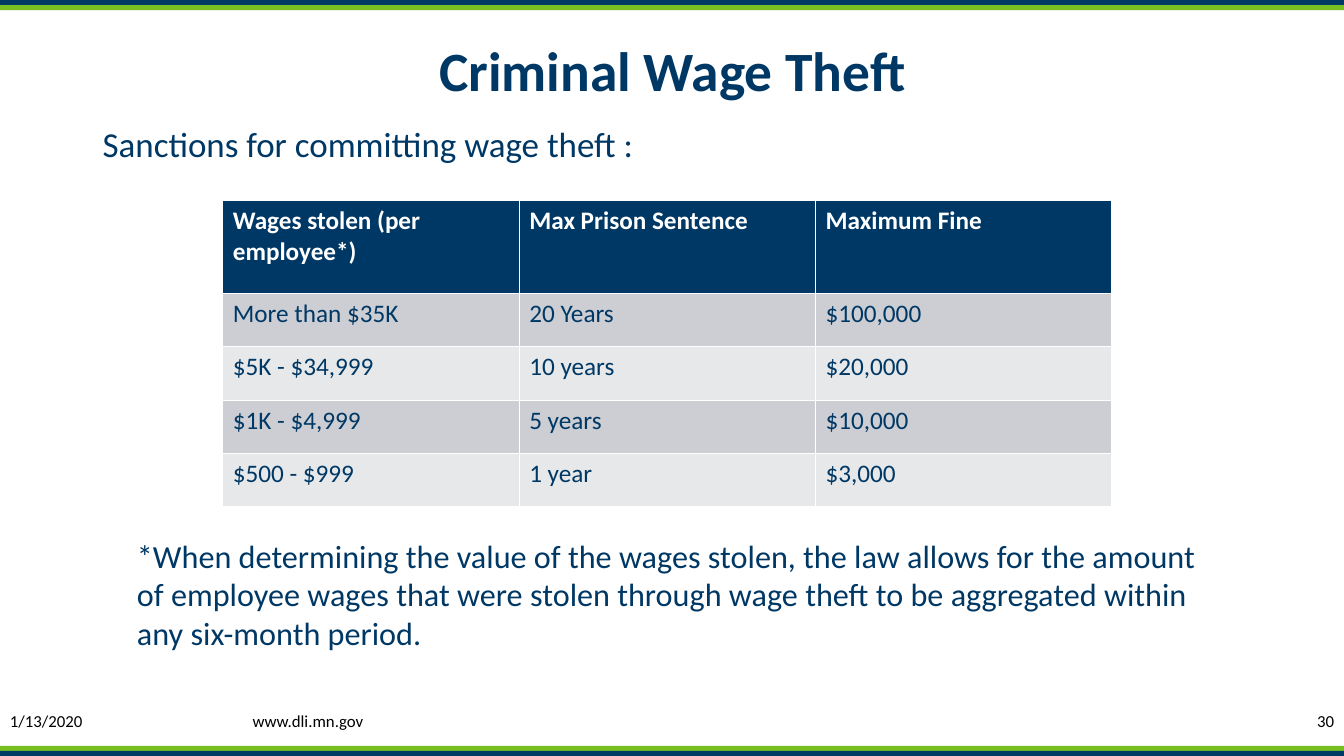
"""Build the slide on sanctions for criminal wage theft."""
from pptx import Presentation
from pptx.dml.color import RGBColor
from pptx.enum.shapes import MSO_SHAPE
from pptx.enum.text import MSO_ANCHOR, PP_ALIGN
from pptx.util import Inches, Pt

NAVY = RGBColor(0x00, 0x38, 0x65)
GREEN = RGBColor(0x78, 0xBE, 0x21)
BLACK = RGBColor(0, 0, 0)
WHITE = RGBColor(0xFF, 0xFF, 0xFF)
DARK_BAND = RGBColor(0xCC, 0xCE, 0xD3)
LIGHT_BAND = RGBColor(0xE7, 0xE8, 0xEA)
WIDTH, HEIGHT, STRIPE = 13.33, 7.5, 0.05

prs = Presentation()
prs.slide_width, prs.slide_height = Inches(WIDTH), Inches(HEIGHT)
slide = prs.slides.add_slide(prs.slide_layouts[6])


def style(paragraph, size, color, bold=False):
    font = paragraph.font
    font.name, font.size, font.bold = "Calibri", Pt(size), bold
    font.color.rgb = color


def add_text(text, box, size, color=NAVY, align=PP_ALIGN.LEFT, anchor=MSO_ANCHOR.TOP, bold=False):
    frame = slide.shapes.add_textbox(*map(Inches, box)).text_frame
    frame.word_wrap = True
    frame.vertical_anchor = anchor
    paragraph = frame.paragraphs[0]
    paragraph.text = text
    paragraph.alignment = align
    style(paragraph, size, color, bold)
    return paragraph


edge_stripes = [(0, NAVY), (STRIPE, GREEN), (HEIGHT - 2 * STRIPE, GREEN), (HEIGHT - STRIPE, NAVY)]
for top, color in edge_stripes:
    stripe = slide.shapes.add_shape(
        MSO_SHAPE.RECTANGLE, 0, Inches(top), prs.slide_width, Inches(STRIPE))
    stripe.shadow.inherit = False
    stripe.fill.solid()
    stripe.fill.fore_color.rgb = color
    stripe.line.fill.background()

title = add_text("Criminal Wage Theft", (0.92, 0.4, 11.5, 0.65), 39.6,
                 align=PP_ALIGN.CENTER, anchor=MSO_ANCHOR.MIDDLE, bold=True)
title.line_spacing = 0.9
add_text("Sanctions for committing wage theft :", (0.92, 1.17, 11.5, 5.58), 25)

footer = [
    ("1/13/2020", 0, 1.49, PP_ALIGN.LEFT),
    ("www.dli.mn.gov", 0, 6.11, PP_ALIGN.CENTER),
    ("30", WIDTH - 1.6, 1.6, PP_ALIGN.RIGHT),
]
for text, left, width, align in footer:
    add_text(text, (left, 6.95, width, 0.4), 12, BLACK, align, MSO_ANCHOR.MIDDLE)

sanctions = [
    ("Wages stolen (per employee*)", "Max Prison Sentence", "Maximum Fine"),
    ("More than $35K", "20 Years", "$100,000"),
    ("$5K - $34,999", "10 years", "$20,000"),
    ("$1K - $4,999", "5 years", "$10,000"),
    ("$500 - $999", "1 year", "$3,000"),
]
table = slide.shapes.add_table(
    len(sanctions), 3, Inches(2.21), Inches(1.99), Inches(8.82), Inches(3.05)).table
for row_index, sanction in enumerate(sanctions):
    is_header = row_index == 0
    band = NAVY if is_header else DARK_BAND if row_index % 2 else LIGHT_BAND
    table.rows[row_index].height = Inches(0.92 if is_header else 0.53)
    for column_index, text in enumerate(sanction):
        cell = table.cell(row_index, column_index)
        cell.text = text
        cell.fill.solid()
        cell.fill.fore_color.rgb = band
        style(cell.text_frame.paragraphs[0], 18, WHITE if is_header else NAVY, is_header)

add_text("*When determining the value of the wages stolen, the law allows for the amount of "
         "employee wages that were stolen through wage theft to be aggregated within any "
         "six-month period.", (1.26, 5.27, 10.81, 1.26), 23)

prs.save("out.pptx")
